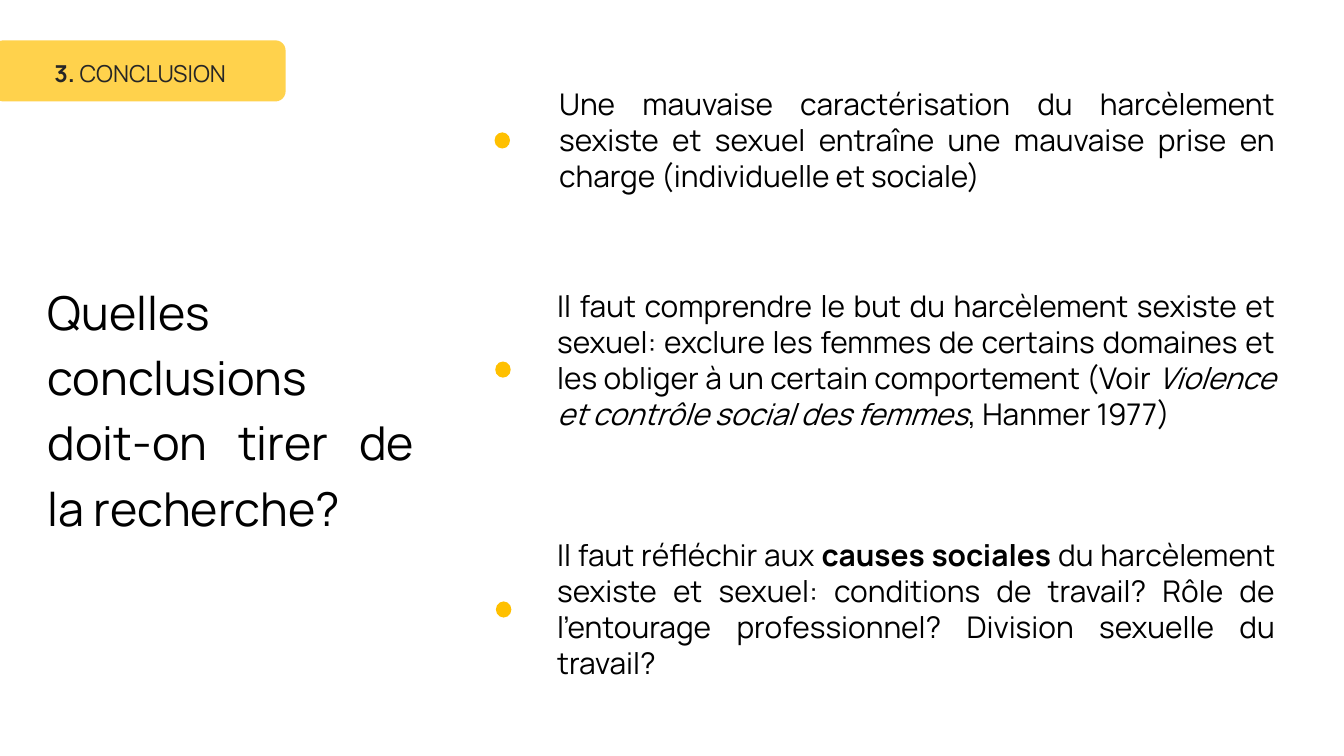
from lxml import etree
from pptx import Presentation
from pptx.dml.color import RGBColor
from pptx.enum import shapes, text
from pptx.oxml.ns import qn
from pptx.util import Inches, Pt

BLACK = RGBColor(0, 0, 0)
DARK_GREY = RGBColor(0x26, 0x26, 0x26)
AMBER = RGBColor(0xFF, 0xC0, 0x00)
FONT = "Manrope"

QUESTION = "Quelles conclusions doit-on tirer de la recherche?"
SECTION = [("3.", "bold"), (" CONCLUSION", "")]

# Text box (left, top, width, height), dot (left, top), runs (text, style)
CONCLUSIONS = [
    ((8.32, 1.28, 10.66, 1.62), (7.36, 1.97), [
        ("Une mauvaise caractérisation du harcèlement sexiste et sexuel entraîne "
         "une mauvaise prise en charge (individuelle et sociale)", ""),
    ]),
    ((8.29, 4.28, 10.69, 2.69), (7.37, 5.38), [
        ("Il faut comprendre le but du harcèlement sexiste et sexuel: exclure les "
         "femmes de certains domaines et les obliger à un certain comportement (Voir ", ""),
        ("Violence et contrôle social des femmes", "italic"),
        (", Hanmer 1977)", ""),
    ]),
    ((8.29, 7.99, 10.69, 2.15), (7.38, 8.95), [
        ("Il faut réfléchir aux ", ""),
        ("causes sociales", "bold"),
        (" du harcèlement sexiste et sexuel: conditions de travail? Rôle de "
         "l’entourage professionnel? Division sexuelle du travail?", ""),
    ]),
]
DOT_SIZE = (0.23, 0.24)


def inches(*lengths):
    return [Inches(length) for length in lengths]


def clear_margins(frame):
    frame.margin_left = frame.margin_top = frame.margin_right = frame.margin_bottom = 0


def add_runs(paragraph, runs, size, color):
    for words, style in runs:
        run = paragraph.add_run()
        run.text = words
        font = run.font
        font.name, font.size = FONT, Pt(size)
        font.bold, font.italic = style == "bold", style == "italic"
        font.color.rgb = color


def add_amber_shape(slide, kind, box):
    shape = slide.shapes.add_shape(kind, *inches(*box))
    shape.shadow.inherit = False
    shape.fill.solid()
    shape.fill.fore_color.rgb = AMBER
    shape.line.fill.background()
    return shape


def add_question(slide):
    title = slide.shapes.title
    title.left, title.top, title.width, title.height = inches(0.71, 4.08, 5.46, 3.89)
    frame = title.text_frame
    clear_margins(frame)
    frame.word_wrap = True
    frame.auto_size = text.MSO_AUTO_SIZE.NONE
    frame.vertical_anchor = text.MSO_ANCHOR.TOP
    paragraph = frame.paragraphs[0]
    paragraph.alignment = text.PP_ALIGN.JUSTIFY
    paragraph.line_spacing = Pt(70)
    add_runs(paragraph, [(QUESTION, "")], 50, BLACK)


def add_conclusion(slide, box, dot, runs):
    add_amber_shape(slide, shapes.MSO_SHAPE.OVAL, dot + DOT_SIZE)
    frame = slide.shapes.add_textbox(*inches(*box)).text_frame
    clear_margins(frame)
    frame.word_wrap = True
    paragraph = frame.paragraphs[0]
    paragraph.alignment = text.PP_ALIGN.JUSTIFY
    add_runs(paragraph, runs, 32, BLACK)


def add_section_tab(slide):
    tab = add_amber_shape(slide, shapes.MSO_SHAPE.ROUNDED_RECTANGLE, (-0.1, 0.6, 4.35, 0.91))
    color = tab.fill._xPr.find(qn("a:solidFill"))[0]
    etree.SubElement(color, qn("a:alpha"), val="70000")
    frame = slide.shapes.add_textbox(*inches(0.71, 0.83, 2.87, 0.52)).text_frame
    frame.word_wrap = False
    add_runs(frame.paragraphs[0], SECTION, 25, DARK_GREY)


def main():
    presentation = Presentation()
    presentation.slide_width, presentation.slide_height = inches(20, 11.25)
    slide = presentation.slides.add_slide(presentation.slide_layouts.get_by_name("Title Only"))
    add_question(slide)
    for box, dot, runs in CONCLUSIONS:
        add_conclusion(slide, box, dot, runs)
    add_section_tab(slide)
    presentation.save("out.pptx")


if __name__ == "__main__":
    main()
